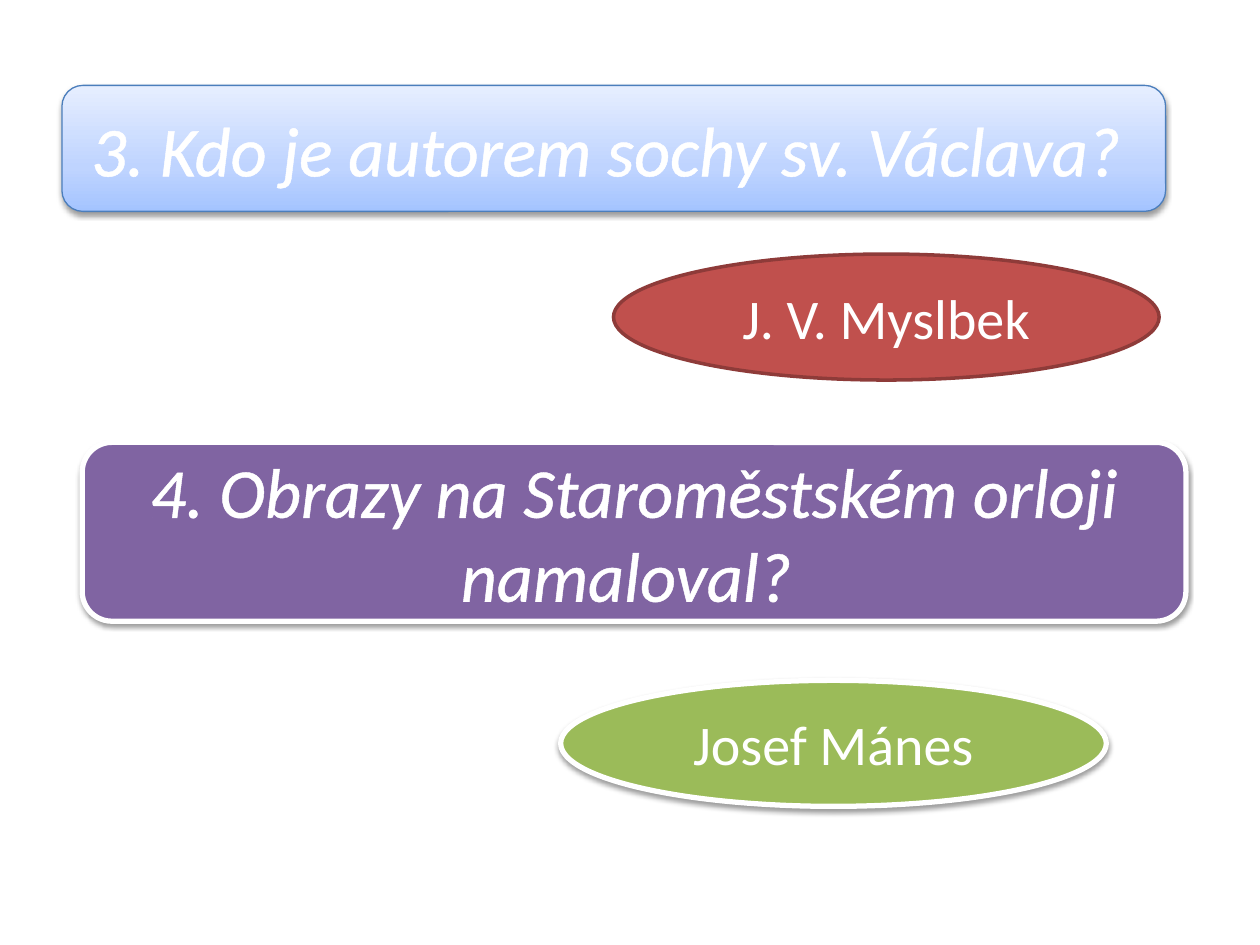
from dataclasses import dataclass

from lxml import etree
from pptx import Presentation
from pptx import util as u
from pptx.dml.color import RGBColor
from pptx.enum import shapes, text
from pptx.oxml import parse_xml
from pptx.oxml.ns import nsdecls, qn


@dataclass(frozen=True)
class Theme:
    font: str = "Calibri"
    ask: int = 40
    reply: int = 32
    edge: float = 1.45
    white: str = "FFFFFF"
    black: str = "000000"
    blue: str = "4B7EBC"
    sky: tuple = ((0, "A4C4FF"), (35, "BFD4FF"), (100, "E6EEFF"))
    red: str = "C0504D"
    wine: str = "8E3B39"
    plum: str = "8064A2"
    green: str = "9BBB59"


class Quiz:
    """Draws question bars and answer ovals on one slide."""

    def __init__(self, theme, slide):
        self.theme = theme
        self.slide = slide

    def ask(self, words, box, fill, line, width):
        shape = self.shape(shapes.MSO_SHAPE.ROUNDED_RECTANGLE, box, fill, line, width)
        self.shade(shape)
        run = self.label(shape, words, self.theme.ask)
        run.font.italic = True
        self.trace(run)

    def reply(self, words, box, fill, line, width, shade=False):
        shape = self.shape(shapes.MSO_SHAPE.OVAL, box, fill, line, width)
        if shade:
            self.shade(shape)
        self.label(shape, words, self.theme.reply)

    def shape(self, kind, box, fill, line, width):
        shape = self.slide.shapes.add_shape(kind, *map(u.Pt, box))
        shape.shadow.inherit = False
        if isinstance(fill, str):
            shape.fill.solid()
            shape.fill.fore_color.rgb = RGBColor.from_string(fill)
        else:
            self.blend(shape, fill)
        shape.line.color.rgb = RGBColor.from_string(line)
        shape.line.width = u.Pt(width)
        return shape

    def blend(self, shape, stops):
        shape.fill.gradient()
        shape.fill.gradient_angle = 90
        group = shape._element.spPr.find(".//" + qn("a:gsLst"))
        for stop in list(group):
            group.remove(stop)
        for place, tone in stops:
            stop = etree.SubElement(group, qn("a:gs"), pos=str(place * 1000))
            etree.SubElement(stop, qn("a:srgbClr"), val=tone)

    def shade(self, shape):
        group = shape._element.spPr.find(qn("a:effectLst"))
        group.append(parse_xml(
            f'<a:outerShdw {nsdecls("a")} blurRad="{u.Pt(3.1)}" dist="{u.Pt(1.6)}" '
            f'dir="5400000" rotWithShape="0"><a:srgbClr val="{self.theme.black}">'
            '<a:alpha val="38000"/></a:srgbClr></a:outerShdw>'))

    def label(self, shape, words, size):
        frame = shape.text_frame
        frame.word_wrap = True
        frame.vertical_anchor = text.MSO_ANCHOR.MIDDLE
        para = frame.paragraphs[0]
        para.alignment = text.PP_ALIGN.CENTER
        run = para.add_run()
        run.text = words
        run.font.name = self.theme.font
        run.font.size = u.Pt(size)
        run.font.color.rgb = RGBColor.from_string(self.theme.white)
        return run

    def trace(self, run):
        run.font._element.insert(0, parse_xml(
            f'<a:ln {nsdecls("a")} w="{u.Pt(self.theme.edge)}"><a:solidFill>'
            f'<a:srgbClr val="{self.theme.white}"/></a:solidFill></a:ln>'))


def main():
    deck = Presentation()
    deck.slide_width, deck.slide_height = u.Pt(720), u.Pt(540)
    t = Theme()
    quiz = Quiz(t, deck.slides.add_slide(deck.slide_layouts[6]))
    bar, oval, high = 630.7, 311.8, 72
    quiz.ask("3. Kdo je autorem sochy sv. Václava? ",
             (35.4, 48.8, bar, high), t.sky, t.blue, 0.75)
    quiz.reply("J. V. Myslbek", (350.6, 145.2, oval, high), t.red, t.wine, 2)
    quiz.ask("4. Obrazy na Staroměstském orloji namaloval? ",
             (47, 252.8, bar, 102.2), t.plum, t.white, 3)
    quiz.reply("Josef Mánes", (320.4, 388.8, oval, high), t.green, t.white, 3, True)
    deck.save("out.pptx")


if __name__ == "__main__":
    main()
